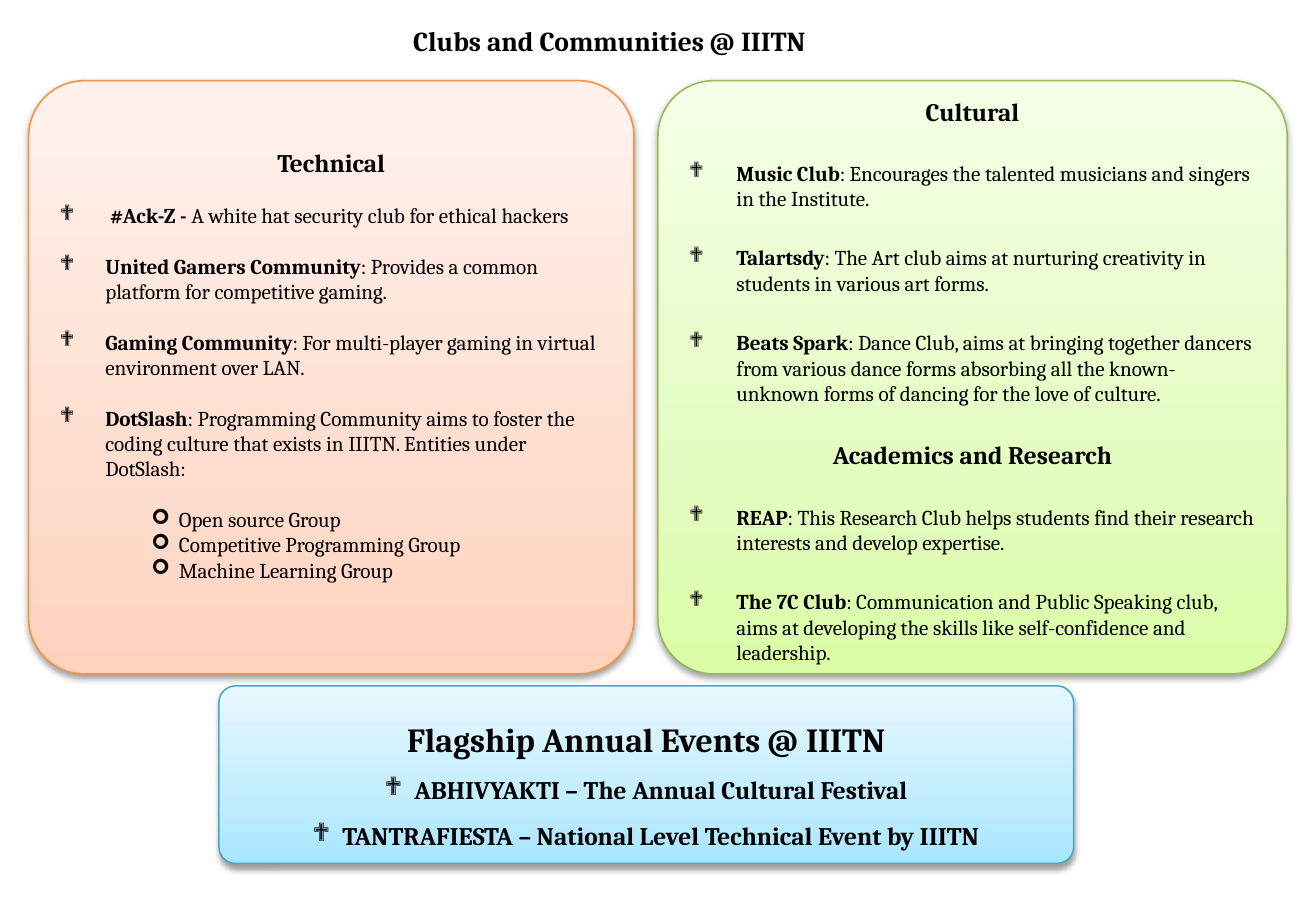
"""Builds a one-page overview of student clubs and annual events."""
from copy import deepcopy
from dataclasses import dataclass

from lxml.etree import SubElement
from pptx import Presentation
from pptx.dml.color import RGBColor
from pptx.enum.shapes import MSO_SHAPE as Preset
from pptx.enum.text import MSO_ANCHOR as Anchor, PP_ALIGN as Align
from pptx.oxml.ns import qn
from pptx.util import Cm, Pt

FONT = "Cambria"
BULLET_FONT = "Wingdings"
BLACK = RGBColor(0x00, 0x00, 0x00)
ORANGE = RGBColor(0xF6, 0x92, 0x40)
PEACH = (RGBColor(0xFF, 0xD2, 0xBD), RGBColor(0xFF, 0xDE, 0xD0), RGBColor(0xFF, 0xF2, 0xED))
GREEN = RGBColor(0x98, 0xB9, 0x55)
LIME = (RGBColor(0xDA, 0xFD, 0xA7), RGBColor(0xE4, 0xFC, 0xC2), RGBColor(0xF5, 0xFF, 0xE7))
TEAL = RGBColor(0x46, 0xAA, 0xC5)
SKY = (RGBColor(0xA7, 0xE6, 0xFF), RGBColor(0xC1, 0xED, 0xFF), RGBColor(0xE7, 0xF8, 0xFF))
STOPS = (0, 0.35, 1)


@dataclass(frozen=True)
class Style:
    size: float = 10
    bullet: str = ""
    margin: float = 0
    hanging: float = 0
    centred: bool = False
    gap: float = 0
    spacing: float = 1
    level: int = 0


@dataclass(frozen=True)
class Entry:
    style: Style
    strong: str = ""
    plain: str = ""


@dataclass(frozen=True)
class Panel:
    left: float
    top: float
    width: float
    height: float
    outline: RGBColor
    shades: tuple[RGBColor, ...]
    inset_top: float
    inset_bottom: float
    entries: tuple[Entry, ...]


TITLE = Style(size=13, centred=True)
HEADING = Style(size=12, centred=True)
LATER_HEADING = Style(size=12, centred=True, gap=16.1)
TECHNICAL = Style(bullet="❖", margin=0.76, hanging=0.76, gap=12)
CULTURAL = Style(bullet="❖", margin=0.79, hanging=0.79, gap=16.1)
GROUP = Style(bullet="➢", margin=1.99, hanging=0.46, level=1)
FIRST_GROUP = Style(bullet="➢", margin=1.99, hanging=0.46, level=1, gap=12)
FLAGSHIP = Style(size=16, centred=True, spacing=1.5)
EVENT = Style(size=12, bullet="❖", margin=0.5, hanging=0.5, centred=True, spacing=1.5)

PANELS = (
    Panel(0.48, 1.35, 10.12, 9.92, ORANGE, PEACH, 0.13, 0.55, (
        Entry(HEADING, "Technical"),
        Entry(TECHNICAL, " #Ack-Z -", " A white hat security club for ethical hackers"),
        Entry(TECHNICAL, "United Gamers Community",
              ": Provides a common platform for competitive gaming."),
        Entry(TECHNICAL, "Gaming Community",
              ": For multi-player gaming in virtual environment over LAN."),
        Entry(TECHNICAL, "DotSlash",
              ": Programming Community aims to foster the coding culture that exists in IIITN. "
              "Entities under DotSlash:"),
        Entry(FIRST_GROUP, plain="Open source Group"),
        Entry(GROUP, plain="Competitive Programming Group"),
        Entry(GROUP, plain="Machine Learning Group"),
    )),
    Panel(11, 1.35, 10.52, 9.92, GREEN, LIME, 0.1, 0, (
        Entry(HEADING, "Cultural"),
        Entry(CULTURAL, "Music Club",
              ": Encourages the talented musicians and singers in the Institute."),
        Entry(CULTURAL, "Talartsdy",
              ": The Art club aims at nurturing creativity in students in various art forms."),
        Entry(CULTURAL, "Beats Spark",
              ": Dance Club, aims at bringing together dancers from various dance forms "
              "absorbing all the known-unknown forms of dancing for the love of culture."),
        Entry(LATER_HEADING, "Academics and Research"),
        Entry(CULTURAL, "REAP",
              ": This Research Club helps students find their research interests "
              "and develop expertise."),
        Entry(CULTURAL, "The 7C Club",
              ": Communication and Public Speaking club, aims at developing the skills "
              "like self-confidence and leadership."),
    )),
    Panel(3.66, 11.47, 14.29, 2.97, TEAL, SKY, 0.13, 0.13, (
        Entry(FLAGSHIP, "Flagship Annual Events @ IIITN"),
        Entry(EVENT, "ABHIVYAKTI – The Annual Cultural Festival"),
        Entry(EVENT, "TANTRAFIESTA – National Level Technical Event by IIITN"),
    )),
)


def add_span(para, text: str, *, size: float, bold: bool) -> None:
    span = para.add_run()
    span.text = text
    span.font.name = FONT
    span.font.size = Pt(size)
    span.font.bold = bold
    span.font.color.rgb = BLACK


def write_entries(frame, entries: tuple[Entry, ...]) -> None:
    frame.word_wrap = True
    frame.vertical_anchor = Anchor.MIDDLE
    for index, entry in enumerate(entries):
        style = entry.style
        para = frame.add_paragraph() if index else frame.paragraphs[0]
        para.alignment = Align.CENTER if style.centred else Align.LEFT
        para.level = style.level
        para.space_before = Pt(style.gap)
        para.line_spacing = style.spacing
        for text, bold in ((entry.strong, True), (entry.plain, False)):
            if text:
                add_span(para, text, size=style.size, bold=bold)
        if style.bullet:
            properties = para._p.get_or_add_pPr()
            properties.set("marL", str(Cm(style.margin)))
            properties.set("indent", str(-Cm(style.hanging)))
            SubElement(properties, qn("a:buFont"), typeface=BULLET_FONT)
            SubElement(properties, qn("a:buChar"), char=style.bullet)


def fill_gradient(shape, shades: tuple[RGBColor, ...]) -> None:
    shape.fill.gradient()
    shape.fill.gradient_angle = 90
    stop_list = shape.element.spPr.find(qn("a:gradFill")).find(qn("a:gsLst"))
    stop_list.append(deepcopy(stop_list[-1]))
    for stop, position, shade in zip(shape.fill.gradient_stops, STOPS, shades):
        stop.position = position
        stop.color.rgb = shade


def add_shadow(shape) -> None:
    shape.shadow.inherit = False
    effects = shape.element.spPr.find(qn("a:effectLst"))
    shadow = SubElement(effects, qn("a:outerShdw"), blurRad=str(Pt(3.1)),
                        dist=str(Pt(1.6)), dir="5400000", rotWithShape="0")
    color = SubElement(shadow, qn("a:srgbClr"), val=str(BLACK))
    SubElement(color, qn("a:alpha"), val="38000")


def draw_panel(page, panel: Panel) -> None:
    shape = page.shapes.add_shape(Preset.ROUNDED_RECTANGLE, Cm(panel.left), Cm(panel.top),
                                  Cm(panel.width), Cm(panel.height))
    shape.adjustments[0] = 0.094
    fill_gradient(shape, panel.shades)
    shape.line.color.rgb = panel.outline
    shape.line.width = Pt(0.75)
    add_shadow(shape)
    shape.text_frame.margin_top = Cm(panel.inset_top)
    shape.text_frame.margin_bottom = Cm(panel.inset_bottom)
    write_entries(shape.text_frame, panel.entries)


def main() -> None:
    deck = Presentation()
    deck.slide_width, deck.slide_height = Cm(22), Cm(15)
    page = deck.slides.add_slide(deck.slide_layouts[6])
    box = page.shapes.add_textbox(Cm(0.28), Cm(0), Cm(19.81), Cm(1.35))
    write_entries(box.text_frame, (Entry(TITLE, "Clubs and Communities @ IIITN"),))
    for panel in PANELS:
        draw_panel(page, panel)
    deck.save("out.pptx")


if __name__ == "__main__":
    main()
